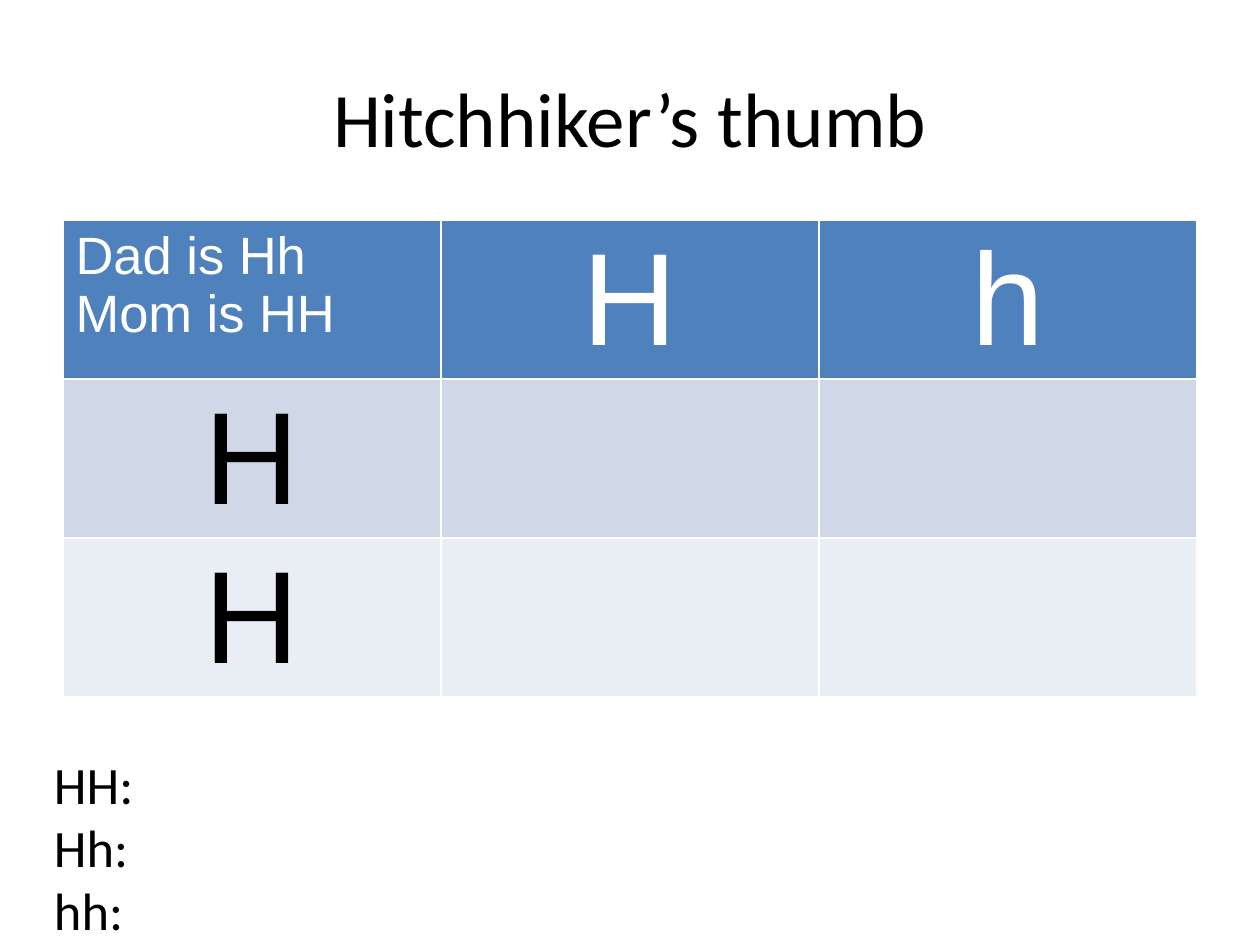
"""Build a Punnett square slide for the hitchhiker's thumb trait."""
from dataclasses import dataclass

from pptx import Presentation
from pptx.dml.color import RGBColor
from pptx.enum.text import MSO_ANCHOR, PP_ALIGN
from pptx.util import Inches, Pt


@dataclass(frozen=True)
class Theme:
    text: str = "000000"
    header_text: str = "FFFFFF"
    row_fills: tuple = ("4F81BD", "D0D8E8", "E9EDF4")
    main_font: str = "Calibri"
    table_font: str = "Arial"
    title_size: int = 44
    body_size: int = 30
    allele_size: int = 75


theme = Theme()


def write_text(frame, *lines, font=theme.main_font, size=theme.body_size,
               color=theme.text, align=PP_ALIGN.LEFT):
    for index, line in enumerate(lines):
        paragraph = frame.add_paragraph() if index else frame.paragraphs[0]
        paragraph.alignment = align
        run = paragraph.add_run()
        run.text = line
        run.font.name = font
        run.font.size = Pt(size)
        run.font.bold = False
        run.font.color.rgb = RGBColor.from_string(color)


presentation = Presentation()
presentation.slide_width, presentation.slide_height = Inches(10), Inches(7.5)
slide = presentation.slides.add_slide(presentation.slide_layouts[5])
margin = Inches(0.5)
content_width = presentation.slide_width - 2 * margin

title = slide.shapes.title
title.left, title.top = margin, Inches(0.3)
title.width, title.height = content_width, Inches(1.25)
title.text_frame.vertical_anchor = MSO_ANCHOR.MIDDLE
write_text(title.text_frame, "Hitchhiker’s thumb", size=theme.title_size,
           align=PP_ALIGN.CENTER)

square = [
    [("Dad is Hh", "Mom is HH"), ("H",), ("h",)],
    [("H",), (), ()],
    [("H",), (), ()],
]
row_height = Inches(1.26)
table = slide.shapes.add_table(len(square), len(square[0]), margin, Inches(1.75),
                               content_width, row_height * len(square)).table
for row_index, row in enumerate(square):
    for column_index, lines in enumerate(row):
        cell = table.cell(row_index, column_index)
        cell.fill.solid()
        cell.fill.fore_color.rgb = RGBColor.from_string(theme.row_fills[row_index])
        cell.margin_bottom = Inches(0.01)
        is_corner = row_index == column_index == 0
        write_text(cell.text_frame, *lines, font=theme.table_font,
                   size=theme.body_size if is_corner else theme.allele_size,
                   color=theme.text if row_index else theme.header_text,
                   align=PP_ALIGN.LEFT if is_corner else PP_ALIGN.CENTER)

genotypes = slide.shapes.add_textbox(Inches(0.33), Inches(5.92), Inches(2.92), Inches(1.62))
genotypes.text_frame.word_wrap = True
write_text(genotypes.text_frame, "HH:", "Hh:", "hh:")

presentation.save("out.pptx")
